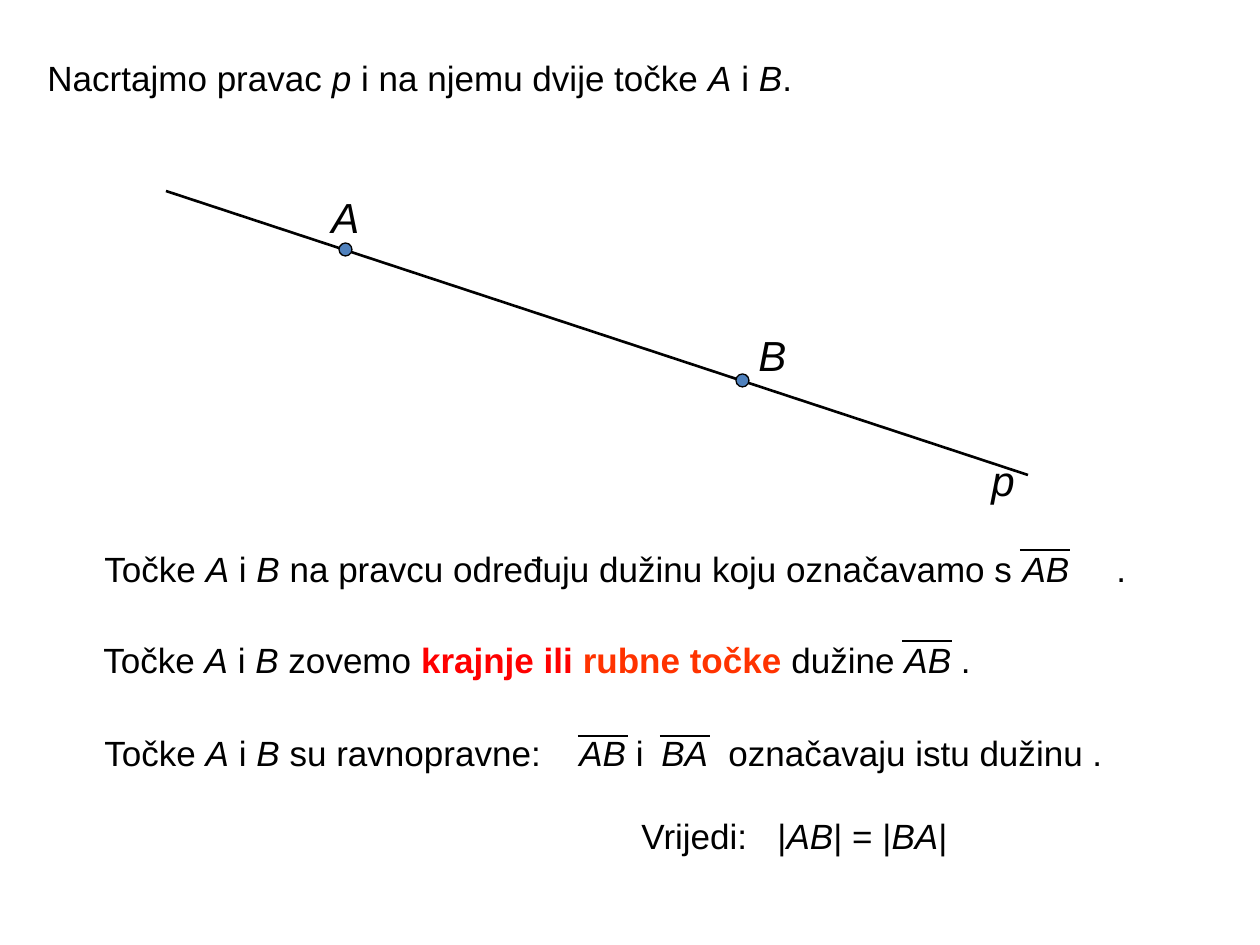
from collections import namedtuple
from dataclasses import dataclass

from lxml import etree
from pptx import Presentation
from pptx.dml.color import RGBColor
from pptx.enum.shapes import MSO_CONNECTOR, MSO_SHAPE
from pptx.enum.text import MSO_ANCHOR, MSO_AUTO_SIZE
from pptx.oxml.ns import qn
from pptx.util import Emu, Pt

STRAIGHT = MSO_CONNECTOR.STRAIGHT
ELLIPSE = MSO_SHAPE.OVAL
TOP = MSO_ANCHOR.TOP
FIT_SHAPE = MSO_AUTO_SIZE.SHAPE_TO_FIT_TEXT
BLANK_LAYOUT = 6
PIXEL = 914400 / 126

Box = namedtuple("Box", "left top width height")


@dataclass(frozen=True)
class Theme:
    font: str = "Arial"
    body_size: int = 20
    label_size: int = 24
    ink: str = "000000"
    point: str = "4F81BD"
    red: str = "FF0000"
    orange: str = "FF3300"
    line_width: float = 1.5
    point_outline: float = 0.75


THEME = Theme()


def px(length):
    return Emu(round(length * PIXEL))


def rgb(color):
    return RGBColor.from_string(color)


def add_tab_stops(paragraph, stops):
    tab_list = etree.SubElement(paragraph._p.get_or_add_pPr(), qn("a:tabLst"))
    for stop in stops:
        etree.SubElement(tab_list, qn("a:tab"), pos=str(px(stop)), algn="l")


def add_text(slide, box, *pieces, size=THEME.body_size, tabs=(), line_spacing=None):
    """Each piece is (text, colour, bold); asterisks in the text enclose italics."""
    shape = slide.shapes.add_textbox(*map(px, box))
    frame = shape.text_frame
    frame.word_wrap = True
    frame.vertical_anchor = TOP
    frame.auto_size = FIT_SHAPE
    paragraph = frame.paragraphs[0]
    if line_spacing:
        paragraph.line_spacing = line_spacing
    if tabs:
        add_tab_stops(paragraph, tabs)
    for text, color, bold in pieces:
        for index, part in enumerate(text.split("*")):
            if not part:
                continue
            run = paragraph.add_run()
            run.text = part
            run.font.name = THEME.font
            run.font.size = Pt(size)
            run.font.bold = bold
            run.font.italic = index % 2 == 1
            run.font.color.rgb = rgb(color)


def plain(text):
    return text, THEME.ink, False


def add_line(slide, start_x, start_y, end_x, end_y):
    line = slide.shapes.add_connector(
        STRAIGHT, px(start_x), px(start_y), px(end_x), px(end_y))
    line.line.color.rgb = rgb(THEME.ink)
    line.line.width = Pt(THEME.line_width)
    etree.SubElement(line._element.spPr, qn("a:effectLst"))


def add_point(slide, left, top, diameter):
    point = slide.shapes.add_shape(
        ELLIPSE, px(left), px(top), px(diameter), px(diameter))
    point.shadow.inherit = False
    point.fill.solid()
    point.fill.fore_color.rgb = rgb(THEME.point)
    point.line.color.rgb = rgb(THEME.ink)
    point.line.width = Pt(THEME.point_outline)


def add_line_figure(slide, box):
    """Draw line p along the diagonal of the box, with points A and B on it."""
    add_line(slide, box.left, box.top,
             box.left + box.width, box.top + box.height)
    for left, top in ((173, 52), (570, 183)):
        add_point(slide, box.left + left, box.top + top, 13)
    labels = (("A", 153, -6, 55), ("B", 580, 132, 77), ("p", 813, 257, 33))
    for name, left, top, width in labels:
        label_box = Box(box.left + left, box.top + top, width, 63)
        add_text(slide, label_box, plain(f"*{name}*"), size=THEME.label_size)


def add_sentence(slide, box, *pieces, tabs=(), overlines=(), overline_top=9):
    """Place a sentence and the bars over its segment names."""
    add_text(slide, box, *pieces, tabs=tabs)
    for left in overlines:
        start, level = box.left + left, box.top + overline_top
        add_line(slide, start, level, start + 50, level)


def add_conclusions(slide, box):
    left, top = box.left, box.top
    add_sentence(
        slide, Box(left, top, box.width, 55),
        plain("Točke *A* i *B* na pravcu određuju dužinu "
              "koju označavamo s *AB*\t."),
        tabs=(1012,), overlines=(928,))
    add_sentence(
        slide, Box(left - 1, top + 91, 1048, 55),
        plain("Točke *A* i *B* zovemo "),
        ("krajnje ili ", THEME.red, True),
        ("rubne točke ", THEME.orange, True),
        plain("dužine *AB* ."),
        overlines=(811,))
    add_sentence(
        slide, Box(left, top + 184, 1123, 55),
        plain("Točke *A* i *B* su ravnopravne:\t*AB* i\t*BA*\t"
              "označavaju istu dužinu ."),
        tabs=(475, 557, 624), overlines=(486, 568), overline_top=11)
    add_sentence(
        slide, Box(left + 537, top + 267, 520, 55),
        plain("Vrijedi:\t|*AB*| = |*BA*|"), tabs=(136,))


def main():
    presentation = Presentation()
    presentation.slide_width = px(1260)
    presentation.slide_height = px(945)
    slide = presentation.slides.add_slide(
        presentation.slide_layouts[BLANK_LAYOUT])
    add_text(slide, Box(35, 55, 1188, 50),
             plain("Nacrtajmo pravac *p* i na njemu dvije točke *A* i *B*."),
             line_spacing=0.9)
    add_line_figure(slide, Box(166, 191, 862, 284))
    add_conclusions(slide, Box(92, 541, 1168, 322))
    presentation.save("out.pptx")


if __name__ == "__main__":
    main()
